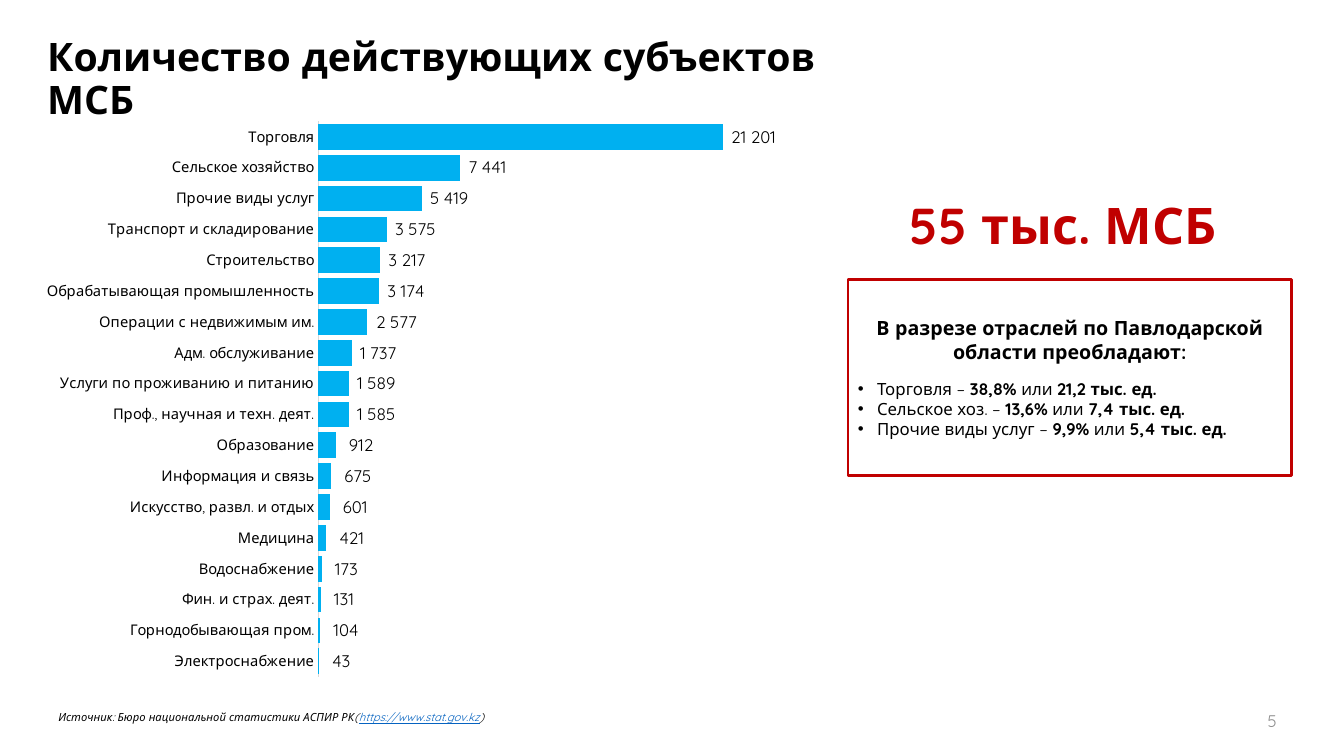
import dataclasses

import pptx
import pptx.chart.data
import pptx.dml.color
import pptx.enum.chart
import pptx.enum.shapes
import pptx.enum.text
import pptx.oxml
import pptx.oxml.ns
import pptx.util

ALIGN = pptx.enum.text.PP_ALIGN
ANCHOR = pptx.enum.text.MSO_ANCHOR


def rgb(value):
    return pptx.dml.color.RGBColor.from_string(value)


@dataclasses.dataclass(frozen=True)
class Theme:
    font: str = "Quicksand"
    ink: str = "000000"
    accent: str = "C00000"
    bar: str = "00B0F0"
    axis: str = "D9D9D9"
    muted: str = "8C8C8C"
    link: str = "0563C1"
    title: float = 28
    headline: float = 36
    lead: float = 14
    body: float = 12
    category: float = 10.5
    source: float = 8


class SlideBuilder:
    def __init__(self, prs, theme):
        self.prs = prs
        self.theme = theme
        self.s = prs.slides.add_slide(prs.slide_layouts[6])

    def place(self, x, y, w, h):
        width, height = self.prs.slide_width, self.prs.slide_height
        return [int(side * share / 100) for side, share in
                ((width, x), (height, y), (width, w), (height, h))]

    def style(self, font, size, color=None, **formats):
        formats = {"name": self.theme.font, "size": pptx.util.Pt(size), **formats}
        for name, value in formats.items():
            setattr(font, name, value)
        font.color.rgb = rgb(color or self.theme.ink)

    def paragraph(self, tf, runs, size, first=False, bullet=False, **formats):
        p = tf.paragraphs[0] if first else tf.add_paragraph()
        if bullet:
            pPr = p._p.get_or_add_pPr()
            indent = pptx.util.Inches(0.19)
            pPr.set("marL", str(indent))
            pPr.set("indent", str(-indent))
            for tag, key, value in (("buFont", "typeface", "Arial"), ("buChar", "char", "•")):
                bu = pptx.oxml.parse_xml(f"<a:{tag} {pptx.oxml.ns.nsdecls('a')}/>")
                bu.set(key, value)
                pPr.append(bu)
        for name, value in formats.items():
            setattr(p, name, value)
        for text, look in runs:
            r = p.add_run()
            r.text = text
            self.style(r.font, size, **look)

    def text(self, at, runs, size, anchor=ANCHOR.TOP, **formats):
        tf = self.s.shapes.add_textbox(*self.place(*at)).text_frame
        tf.word_wrap = True
        tf.vertical_anchor = anchor
        self.paragraph(tf, runs, size, first=True, **formats)

    def panel(self, at, lead, items):
        sp = self.s.shapes.add_shape(pptx.enum.shapes.MSO_SHAPE.RECTANGLE, *self.place(*at))
        sp.shadow.inherit = False
        sp.fill.background()
        sp.line.color.rgb = rgb(self.theme.accent)
        sp.line.width = pptx.util.Pt(2)
        tf = sp.text_frame
        tf.word_wrap = True
        tf.vertical_anchor = ANCHOR.MIDDLE
        self.paragraph(tf, [(lead, {"bold": True})], self.theme.lead, first=True,
                       alignment=ALIGN.CENTER, space_after=pptx.util.Pt(11))
        for name, share, amount in items:
            runs = [(f"{name} – ", {}), (share, {"bold": True}),
                    (" или ", {}), (amount, {"bold": True})]
            self.paragraph(tf, runs, self.theme.body, bullet=True, alignment=ALIGN.LEFT)

    def bars(self, at, values, number_format, layout):
        data = pptx.chart.data.CategoryChartData()
        data.categories = list(values)
        data.add_series("Series 1", list(values.values()))
        chart = self.s.shapes.add_chart(
            pptx.enum.chart.XL_CHART_TYPE.BAR_CLUSTERED, *self.place(*at), data).chart
        chart.has_legend = False
        chart.has_title = False
        self.style(chart.font, self.theme.category)

        axis = chart.category_axis
        axis.major_tick_mark = pptx.enum.chart.XL_TICK_MARK.NONE
        axis.format.line.color.rgb = rgb(self.theme.axis)
        axis.format.line.width = pptx.util.Pt(0.75)
        self.style(axis.tick_labels.font, self.theme.category)
        scale = {"visible": False, "has_major_gridlines": False,
                 "minimum_scale": 0, "maximum_scale": 25000}
        for name, value in scale.items():
            setattr(chart.value_axis, name, value)

        plot = chart.plots[0]
        plot.gap_width = 20
        plot.vary_by_categories = False
        fill = plot.series[0].format.fill
        fill.solid()
        fill.fore_color.rgb = rgb(self.theme.bar)
        plot.has_data_labels = True
        labels = plot.data_labels
        formats = {"show_value": True, "number_format": number_format,
                   "number_format_is_linked": False,
                   "position": pptx.enum.chart.XL_LABEL_POSITION.OUTSIDE_END}
        for name, value in formats.items():
            setattr(labels, name, value)
        self.style(labels.font, self.theme.body)

        area = chart._chartSpace.chart.plotArea
        for old in area.findall(pptx.oxml.ns.qn("c:layout")):
            area.remove(old)
        parts = [("layoutTarget", "inner"), ("xMode", "edge"), ("yMode", "edge"),
                 *zip("xywh", layout)]
        inner = "".join(f'<c:{tag} val="{value}"/>' for tag, value in parts)
        area.insert(0, pptx.oxml.parse_xml(
            f"<c:layout {pptx.oxml.ns.nsdecls('c')}><c:manualLayout>{inner}"
            "</c:manualLayout></c:layout>"))


SUBJECTS = {
    "Электроснабжение": 43,
    "Горнодобывающая пром.": 104,
    "Фин. и страх. деят.": 131,
    "Водоснабжение": 173,
    "Медицина": 421,
    "Искусство, развл. и отдых": 601,
    "Информация и связь": 675,
    "Образование": 912,
    "Проф., научная и техн. деят.": 1585,
    "Услуги по проживанию и питанию": 1589,
    "Адм. обслуживание": 1737,
    "Операции с недвижимым им.": 2577,
    "Обрабатывающая промышленность": 3174,
    "Строительство": 3217,
    "Транспорт и складирование": 3575,
    "Прочие виды услуг": 5419,
    "Сельское хозяйство": 7441,
    "Торговля": 21201,
}
LEADERS = [
    ("Торговля", "38,8%", "21,2 тыс. ед."),
    ("Сельское хоз.", "13,6%", "7,4 тыс. ед."),
    ("Прочие виды услуг", "9,9%", "5,4 тыс. ед."),
]
NUMBER_FORMAT = r'_-* #\ ##0_-;\-* #\ ##0_-;_-* "-"??_-;_-'


def main():
    prs = pptx.Presentation()
    prs.slide_width = pptx.util.Inches(13.33)
    prs.slide_height = pptx.util.Inches(7.5)
    theme = Theme()
    slide = SlideBuilder(prs, theme)

    slide.text((2.78, 4, 65.87, 13.2),
               [("Количество действующих субъектов МСБ", {"bold": True})],
               theme.title, anchor=ANCHOR.MIDDLE, line_spacing=0.9)
    slide.text((65.49, 25.07, 27.16, 9.47),
               [("55 тыс. МСБ", {"bold": True, "color": theme.accent})],
               theme.headline, alignment=ALIGN.CENTER)
    slide.panel((63.09, 36.93, 33.01, 26),
                "В разрезе отраслей по Павлодарской области преобладают:", LEADERS)
    slide.text((90.55, 92.67, 5.18, 5.33), [("5", {"color": theme.muted})],
               theme.body, anchor=ANCHOR.MIDDLE, alignment=ALIGN.RIGHT)
    slide.text((3.6, 93.33, 63.02, 3.2),
               [("Источник: Бюро национальной статистики АСПИР РК(", {"italic": True}),
                ("https://www.stat.gov.kz",
                 {"italic": True, "underline": True, "color": theme.link}),
                (")", {"italic": True})],
               theme.source)
    slide.bars((2.18, 14.53, 58.14, 76.53), SUBJECTS, NUMBER_FORMAT, (0.37, 0.02, 0.61, 0.96))
    prs.save("out.pptx")


if __name__ == "__main__":
    main()
